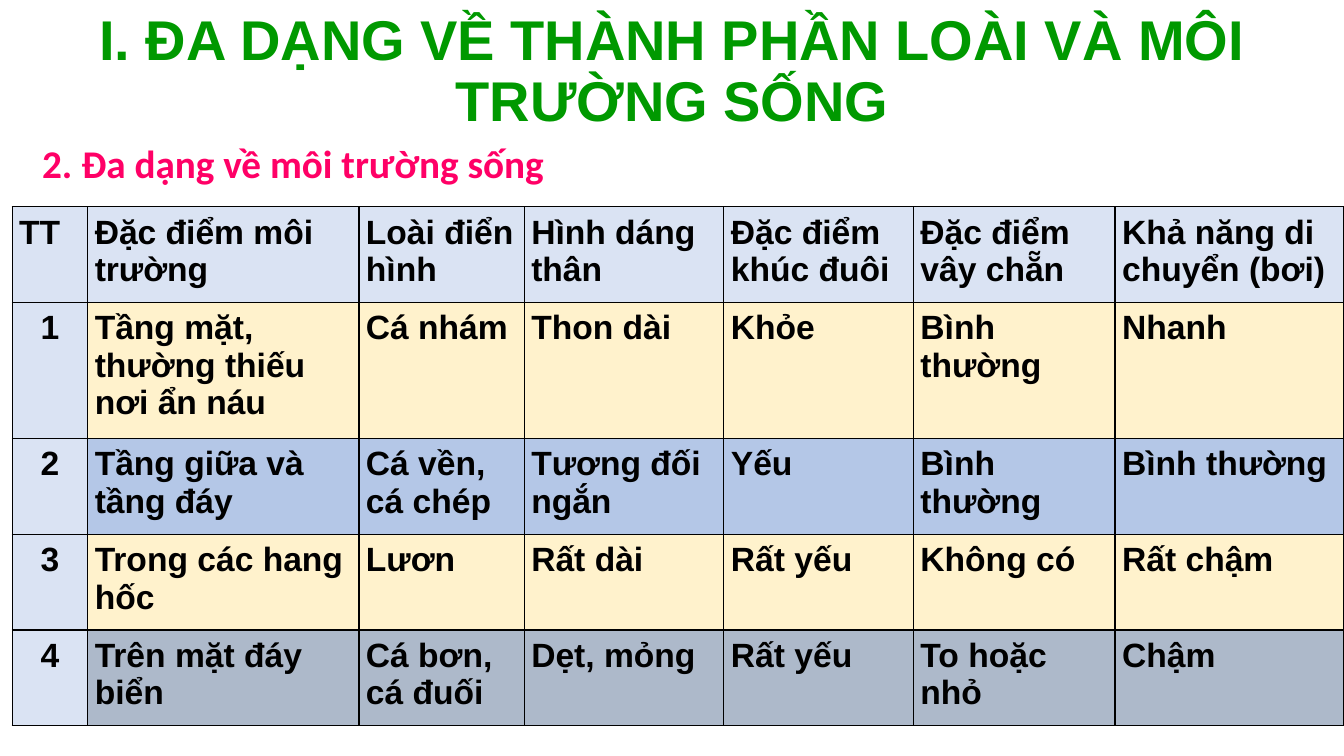
"""Build a slide with a table on how fish vary with their habitat."""
from lxml import etree
from pptx import Presentation
from pptx import util as u
from pptx.dml import color
from pptx.enum import text
from pptx.oxml import ns

COLORS = {
    "title": "009900", "topic": "FF0066", "ink": "000000", "head": "DAE3F3",
    "cream": "FFF2CC", "blue": "B4C7E7", "slate": "ADB9CA",
}


def style(para, font, size, ink, align):
    para.alignment = align
    for run in para.runs:
        run.font.name = font
        run.font.size = u.Pt(size)
        run.font.bold = True
        run.font.color.rgb = color.RGBColor.from_string(COLORS[ink])


def border(cell):
    props = cell._tc.get_or_add_tcPr()
    for spot, side in enumerate(("lnL", "lnR", "lnT", "lnB")):
        line = etree.Element(ns.qn(f"a:{side}"), w=str(u.Pt(1)))
        fill = etree.SubElement(line, ns.qn("a:solidFill"))
        etree.SubElement(fill, ns.qn("a:srgbClr"), val=COLORS["ink"])
        props.insert(spot, line)


deck = Presentation()
deck.slide_width = u.Inches(13.33)
deck.slide_height = u.Inches(7.5)
slide = deck.slides.add_slide(deck.slide_layouts[6])

title = slide.shapes.add_textbox(0, u.Inches(0.06), u.Inches(13.33), u.Inches(1.33))
frame = title.text_frame
frame.word_wrap = True
frame.vertical_anchor = text.MSO_ANCHOR.MIDDLE
frame.text = "I. ĐA DẠNG VỀ THÀNH PHẦN LOÀI VÀ MÔI TRƯỜNG SỐNG"
frame.paragraphs[0].line_spacing = 0.9
style(frame.paragraphs[0], "Arial", 40, "title", text.PP_ALIGN.CENTER)

topic = slide.shapes.add_textbox(u.Inches(0.32), u.Inches(1.33), u.Inches(6.03), u.Inches(0.57))
frame = topic.text_frame
frame.word_wrap = False
frame.auto_size = text.MSO_AUTO_SIZE.SHAPE_TO_FIT_TEXT
frame.text = "2. Đa dạng về môi trường sống"
style(frame.paragraphs[0], "Calibri", 28, "topic", text.PP_ALIGN.JUSTIFY)

rows = [
    ("head", 0.95, ["TT", "Đặc điểm môi trường", "Loài điển hình", "Hình dáng thân",
                    "Đặc điểm khúc đuôi", "Đặc điểm vây chẵn", "Khả năng di chuyển (bơi)"]),
    ("cream", 1.35, ["1", "Tầng mặt, thường thiếu nơi ẩn náu", "Cá nhám", "Thon dài",
                     "Khỏe", "Bình thường", "Nhanh"]),
    ("blue", 0.95, ["2", "Tầng giữa và tầng đáy", "Cá vền, cá chép", "Tương đối ngắn",
                    "Yếu", "Bình thường", "Bình thường"]),
    ("cream", 0.95, ["3", "Trong các hang hốc", "Lươn", "Rất dài",
                     "Rất yếu", "Không có", "Rất chậm"]),
    ("slate", 0.95, ["4", "Trên mặt đáy biển", "Cá bơn, cá đuối", "Dẹt, mỏng",
                     "Rất yếu", "To hoặc nhỏ", "Chậm"]),
]
widths = [0.75, 2.69, 1.64, 1.98, 1.88, 2, 2.27]
table = slide.shapes.add_table(
    len(rows), len(widths), u.Inches(0.12), u.Inches(2.05), u.Inches(13.21), u.Inches(5.15)
).table
for col, width in zip(table.columns, widths):
    col.width = u.Inches(width)

for r, (shade, height, words) in enumerate(rows):
    table.rows[r].height = u.Inches(height)
    for c, word in enumerate(words):
        cell = table.cell(r, c)
        cell.margin_left = cell.margin_right = u.Inches(0.07)
        cell.margin_top = cell.margin_bottom = u.Inches(0.07)
        cell.fill.solid()
        cell.fill.fore_color.rgb = color.RGBColor.from_string(COLORS[shade if c else "head"])
        border(cell)
        cell.text_frame.text = word
        align = text.PP_ALIGN.CENTER if r and not c else text.PP_ALIGN.LEFT
        style(cell.text_frame.paragraphs[0], "Arial", 24, "ink", align)

deck.save("out.pptx")
